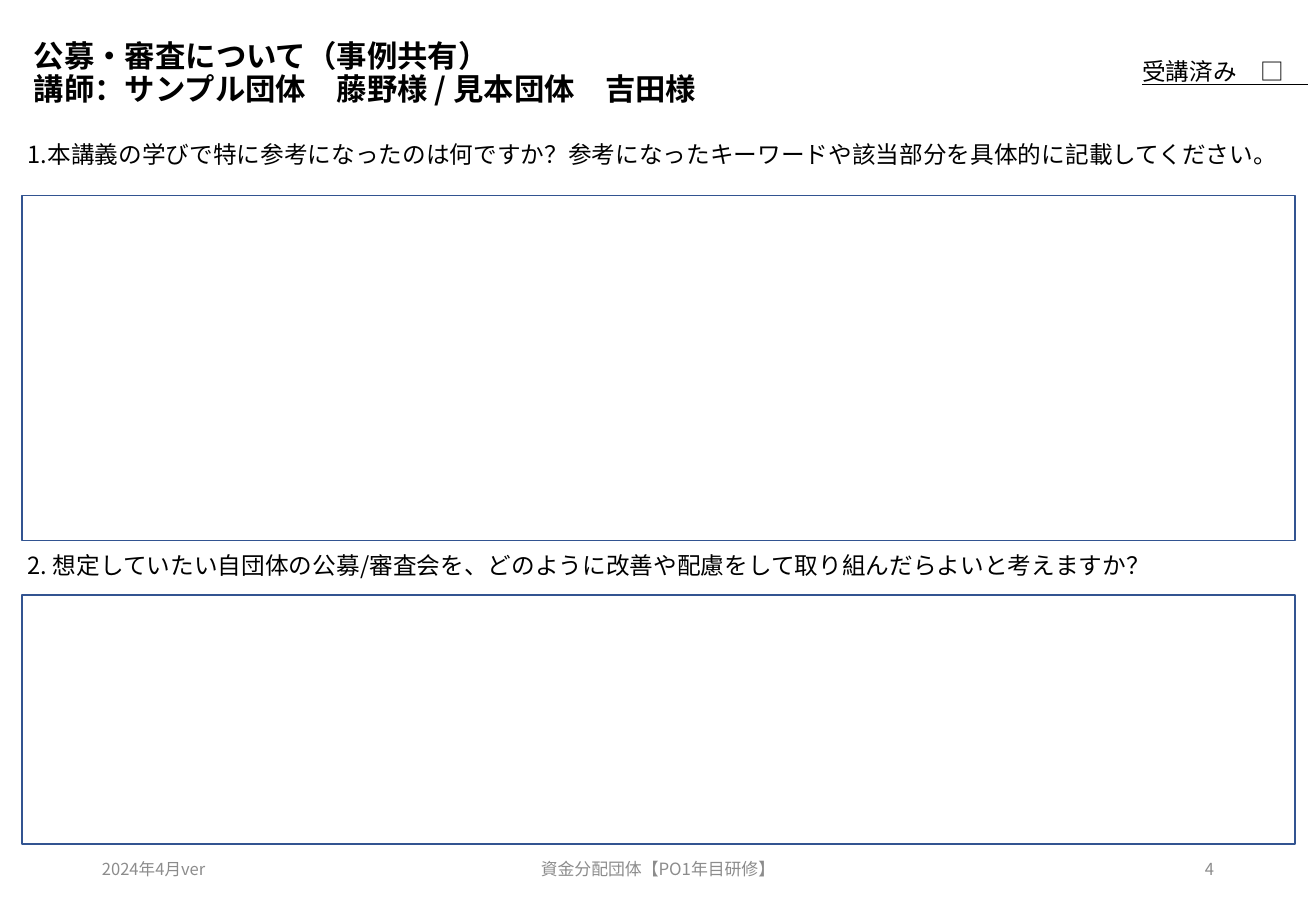
from lxml.etree import SubElement
from pptx import Presentation
from pptx.dml.color import RGBColor
from pptx.enum.shapes import MSO_SHAPE
from pptx.enum.text import MSO_ANCHOR, PP_ALIGN
from pptx.oxml.ns import qn
from pptx.util import Inches, Pt

FONT = "Noto Sans CJK JP"
BLACK = RGBColor(0x00, 0x00, 0x00)
WHITE = RGBColor(0xFF, 0xFF, 0xFF)
BLUE = RGBColor(0x32, 0x54, 0x91)
GRAY = RGBColor(0x8C, 0x8C, 0x8C)

SLIDE_W, SLIDE_H = 10.83, 7.5
MARGIN = 0.18
TEXT_LEFT = 0.13
ANSWER_W = 10.48
LABEL_H = 0.34
FOOTER_H = 0.4


def add_text(s, text, box, size=14, color=BLACK, bold=False, underline=False,
             align=PP_ALIGN.LEFT, anchor=MSO_ANCHOR.TOP, spacing=None):
    tf = s.shapes.add_textbox(*map(Inches, box)).text_frame
    tf.word_wrap = True
    tf.vertical_anchor = anchor
    p = tf.paragraphs[0]
    p.text = text
    p.alignment = align
    p.line_spacing = spacing
    for r in p.runs:
        f = r.font
        f.name, f.size, f.bold, f.underline = FONT, Pt(size), bold, underline
        f.color.rgb = color
        # East Asian typeface
        SubElement(r._r.get_or_add_rPr(), qn("a:ea")).set("typeface", FONT)


def add_header(s, left, top, width, height):
    add_text(s, "公募・審査について（事例共有）\v"
             "講師：サンプル団体　藤野様\u00a0/ 見本団体　吉田様",
             (left, top, width, height), size=18, bold=True,
             anchor=MSO_ANCHOR.MIDDLE, spacing=0.9)
    # Attendance check, running to the slide edge
    add_text(s, "受講済み　□　", (9.3, top + 0.27, 2.01, LABEL_H), underline=True)


def add_question(s, text, top, text_width, answer_top, answer_height):
    sp = s.shapes.add_shape(MSO_SHAPE.RECTANGLE, *map(
        Inches, (MARGIN, answer_top, ANSWER_W, answer_height)))
    sp.shadow.inherit = False
    sp.fill.solid()
    sp.fill.fore_color.rgb = WHITE
    sp.line.color.rgb = BLUE
    sp.line.width = Pt(1)
    add_text(s, text, (TEXT_LEFT, top, text_width, LABEL_H))


def add_footer(s, left, top, width, height):
    side_w, center_w = 2.44, 3.66
    parts = [
        ("2024年4月ver", left, side_w, 9.8, PP_ALIGN.LEFT),
        ("資金分配団体【PO1年目研修】", left + (width - center_w) / 2,
         center_w, 10, PP_ALIGN.CENTER),
        ("4", left + width - side_w, side_w, 9.8, PP_ALIGN.RIGHT),
    ]
    for text, x, w, size, align in parts:
        add_text(s, text, (x, top, w, height), size=size, color=GRAY,
                 align=align, anchor=MSO_ANCHOR.MIDDLE)


def main():
    prs = Presentation()
    prs.slide_width, prs.slide_height = Inches(SLIDE_W), Inches(SLIDE_H)
    s = prs.slides.add_slide(prs.slide_layouts[6])

    add_header(s, MARGIN, 0.15, 9.34, 0.92)
    add_question(s, "1.本講義の学びで特に参考になったのは何ですか？"
                 "参考になったキーワードや該当部分を具体的に記載してください。",
                 1.1, 10.39, 1.61, 2.84)
    add_question(s, "2. 想定していたい自団体の公募/審査会を、"
                 "どのように改善や配慮をして取り組んだらよいと考えますか？",
                 4.49, ANSWER_W, 4.9, 2.05)
    add_footer(s, 0.74, 6.95, 9.35, FOOTER_H)

    prs.save("out.pptx")


if __name__ == "__main__":
    main()
